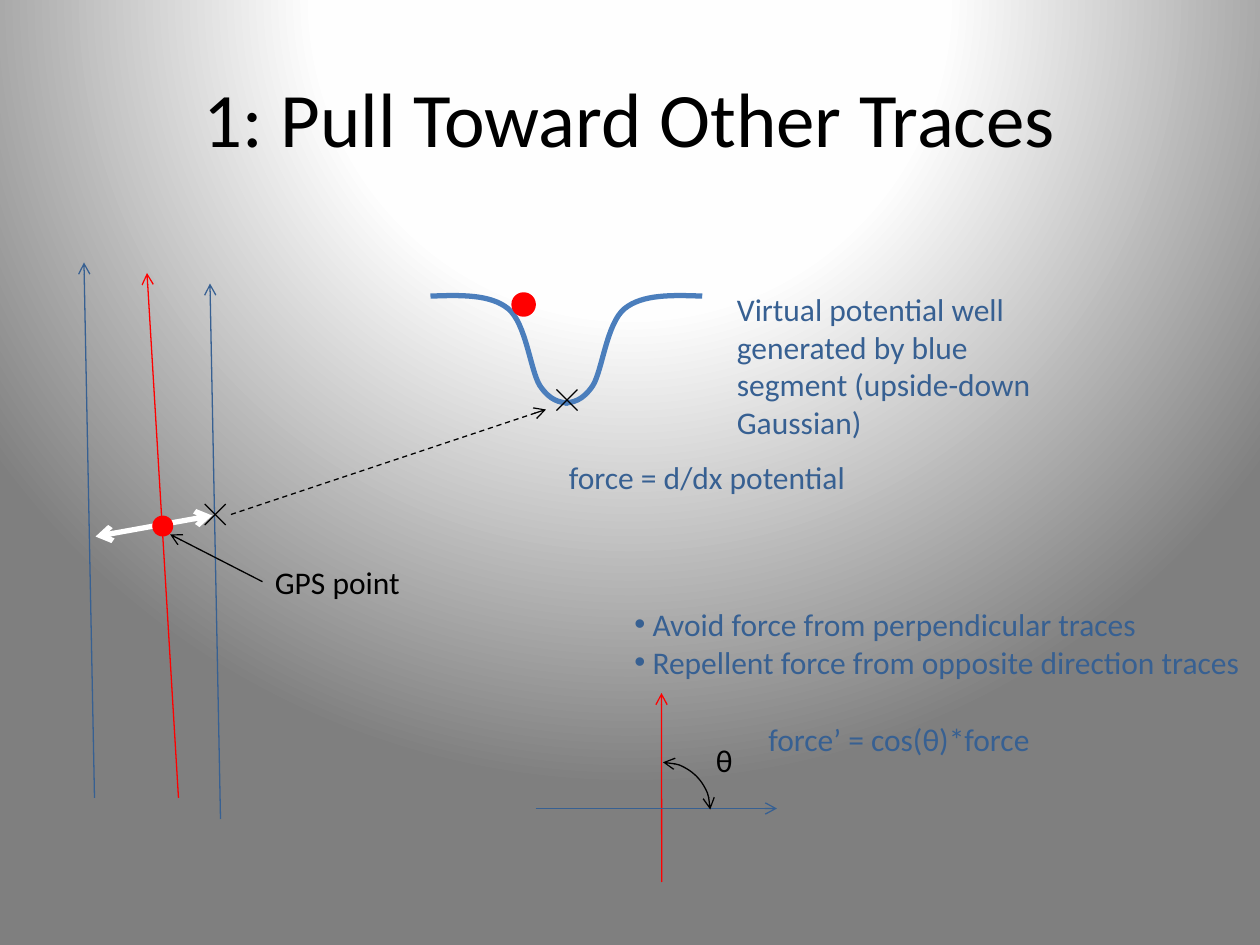
"""Build the slide that explains how GPS traces are pulled together."""
from lxml.etree import SubElement
from pptx import Presentation
from pptx.dml.color import RGBColor
from pptx.enum.dml import MSO_LINE
from pptx.enum.shapes import MSO_CONNECTOR, MSO_SHAPE
from pptx.enum.text import MSO_ANCHOR, MSO_AUTO_SIZE, PP_ALIGN
from pptx.oxml import parse_xml
from pptx.oxml.ns import nsdecls, qn
from pptx.util import Inches, Pt

BLACK = RGBColor(0x00, 0x00, 0x00)
WHITE = RGBColor(0xFF, 0xFF, 0xFF)
RED = RGBColor(0xFF, 0x00, 0x00)
NAVY = RGBColor(0x37, 0x60, 0x92)
BLUE = RGBColor(0x4B, 0x7E, 0xBC)
GLOW_STOPS = ((0, WHITE), (40, RGBColor(0xFE, 0xFE, 0xFE)), (100, RGBColor(0x7F, 0x7F, 0x7F)))

COLUMNS, ROWS = 120, 90
CELL = Inches(10) // COLUMNS
WELL_CENTER = 53.94
WELL_POINTS = (
    (41, 28.2),
    (43.8, 28.1), (46.7, 28), (48.4, 29.4),
    (50.1, 30.8), (50.5, 35.2), (51.4, 36.7),
    (52.4, 38.2), (53.3, 38.3), (54.1, 38.4),
)


def cells(*counts):
    """Turn grid counts into lengths."""
    return [round(count * CELL) for count in counts]


def paint_background(slide):
    """Fill the background with a round glow centred above the slide."""
    slide.background.fill.gradient()
    gradient = slide.element.find(".//" + qn("a:gradFill"))
    stops = "".join(
        f'<a:gs pos="{position * 1000}"><a:srgbClr val="{color}"/></a:gs>'
        for position, color in GLOW_STOPS
    )
    gradient.getparent().replace(gradient, parse_xml(
        f'<a:gradFill {nsdecls("a")} rotWithShape="1"><a:gsLst>{stops}</a:gsLst>'
        '<a:path path="circle"><a:fillToRect l="50000" t="-80000" r="50000" b="180000"/>'
        "</a:path></a:gradFill>"
    ))


def style_line(shape, color, width=0.75, ends=(), dashed=False):
    """Set a line's colour, width, dash and arrowheads."""
    shape.line.color.rgb = color
    shape.line.width = Pt(width)
    if dashed:
        shape.line.dash_style = MSO_LINE.DASH
    outline = shape.element.spPr.find(qn("a:ln"))
    for end in ends:
        SubElement(outline, qn(f"a:{end}End"), type="arrow")


def add_line(slide, start, end, color, **style):
    """Draw a straight connector between two grid points."""
    connector = slide.shapes.add_connector(MSO_CONNECTOR.STRAIGHT, *cells(*start, *end))
    SubElement(connector.element.spPr, qn("a:effectLst"))
    style_line(connector, color, **style)


def add_arrow(slide, start, end, color, **style):
    """Draw a connector with an arrowhead at its end."""
    add_line(slide, start, end, color, ends=("tail",), **style)


def add_cross(slide, x, y):
    """Mark a grid point with two crossing strokes."""
    for rise in (-1, 1):
        add_line(slide, (x - 1, y + rise), (x + 1, y - rise), BLACK)


def add_dot(slide, x, y):
    """Draw a red dot and return it."""
    dot = slide.shapes.add_shape(MSO_SHAPE.OVAL, *cells(x, y, 2, 2))
    dot.shadow.inherit = False
    dot.fill.solid()
    dot.fill.fore_color.rgb = RED
    dot.line.fill.background()
    return dot


def add_angle_arc(slide, box):
    """Draw a quarter arc with arrowheads at both ends."""
    arc = slide.shapes.add_shape(MSO_SHAPE.ARC, *cells(*box))
    arc.shadow.inherit = False
    arc.fill.background()
    style_line(arc, BLACK, ends=("head", "tail"))


def add_curve(slide, points, color, width):
    """Draw a smooth open curve from a start point and Bezier triples."""
    start, *rest = [cells(*point) for point in points]
    builder = slide.shapes.build_freeform(*start)
    builder.add_line_segments(rest, close=False)
    shape = builder.convert_to_shape()
    outline = shape.element.find(".//" + qn("a:path"))
    segments = outline.findall(qn("a:lnTo"))
    for index in range(0, len(segments), 3):
        bezier = SubElement(outline, qn("a:cubicBezTo"))
        for segment in segments[index:index + 3]:
            bezier.append(segment[0])
            outline.remove(segment)
    shape.shadow.inherit = False
    shape.fill.background()
    style_line(shape, color, width)


def add_well(slide):
    """Draw the potential well as two mirrored halves."""
    mirrored = [(2 * WELL_CENTER - x, y) for x, y in WELL_POINTS]
    for half in (WELL_POINTS, mirrored):
        add_curve(slide, half, BLUE, 3)


def add_text(slide, box, text, color=NAVY, size=18, wrap=False, bullets=False):
    """Add a text box with one paragraph per line and return its frame."""
    frame = slide.shapes.add_textbox(*cells(*box)).text_frame
    frame.text = text
    frame.word_wrap = wrap
    frame.auto_size = MSO_AUTO_SIZE.SHAPE_TO_FIT_TEXT
    for paragraph in frame.paragraphs:
        paragraph.font.name = "Calibri"
        paragraph.font.size = Pt(size)
        paragraph.font.color.rgb = color
        if bullets:
            properties = paragraph._p.get_or_add_pPr()
            bullet_font = parse_xml(f'<a:buFont {nsdecls("a")} typeface="Arial"/>')
            bullet = parse_xml(f'<a:buChar {nsdecls("a")} char="•"/>')
            properties.insert(0, bullet_font)
            properties.insert(1, bullet)
    return frame


def add_title(slide, text):
    """Add the centred slide title."""
    frame = add_text(slide, (6, 3.6, 108, 15), text, BLACK, 44, wrap=True)
    frame.auto_size = MSO_AUTO_SIZE.NONE
    frame.vertical_anchor = MSO_ANCHOR.MIDDLE
    frame.paragraphs[0].alignment = PP_ALIGN.CENTER


def add_traces(slide):
    """Draw the GPS traces and the forces on one point."""
    add_line(slide, (9.1, 51.1), (20.2, 49.1), WHITE, width=3, ends=("head", "tail"))
    add_arrow(slide, (17, 76), (14, 26), RED)
    add_arrow(slide, (21, 78), (20, 27), NAVY)
    add_arrow(slide, (9, 76), (8, 25), NAVY)
    add_dot(slide, 14.5, 49.1)
    add_text(slide, (25, 53, 14.4, 4.8), "GPS point", BLACK)
    add_arrow(slide, (25, 55.4), (16.2, 50.9), BLACK)
    add_cross(slide, 20.5, 49)


def add_potential(slide):
    """Draw the potential well with its explanation."""
    add_well(slide)
    style_line(add_dot(slide, 48.87, 28), RED, width=2)
    add_cross(slide, 54, 38.1)
    add_arrow(slide, (22, 49), (52, 39), BLACK, dashed=True)
    add_text(slide, (69, 27, 32, 15.7),
             "Virtual potential well generated by blue segment (upside-down Gaussian)", wrap=True)
    add_text(slide, (53, 43, 29, 4.8), "force = d/dx potential")


def add_direction(slide):
    """Draw the angle between traces and the adjusted force."""
    add_arrow(slide, (63.02, 84), (63, 66), RED)
    add_arrow(slide, (51, 77), (74, 77), NAVY)
    add_angle_arc(slide, (58.64, 72.6, 9, 9))
    add_text(slide, (67, 70, 4.1, 4.8), "θ", BLACK)
    add_text(slide, (72, 68, 27.6, 4.8), "force’ = cos(θ)*force")
    add_text(slide, (59.25, 57, 60.7, 8.5),
             " Avoid force from perpendicular traces\n"
             " Repellent force from opposite direction traces", bullets=True)


def main():
    """Build and save the presentation."""
    presentation = Presentation()
    presentation.slide_width, presentation.slide_height = cells(COLUMNS, ROWS)
    slide = presentation.slides.add_slide(presentation.slide_layouts[6])
    paint_background(slide)
    add_title(slide, "1: Pull Toward Other Traces")
    add_traces(slide)
    add_potential(slide)
    add_direction(slide)
    presentation.save("out.pptx")


if __name__ == "__main__":
    main()
